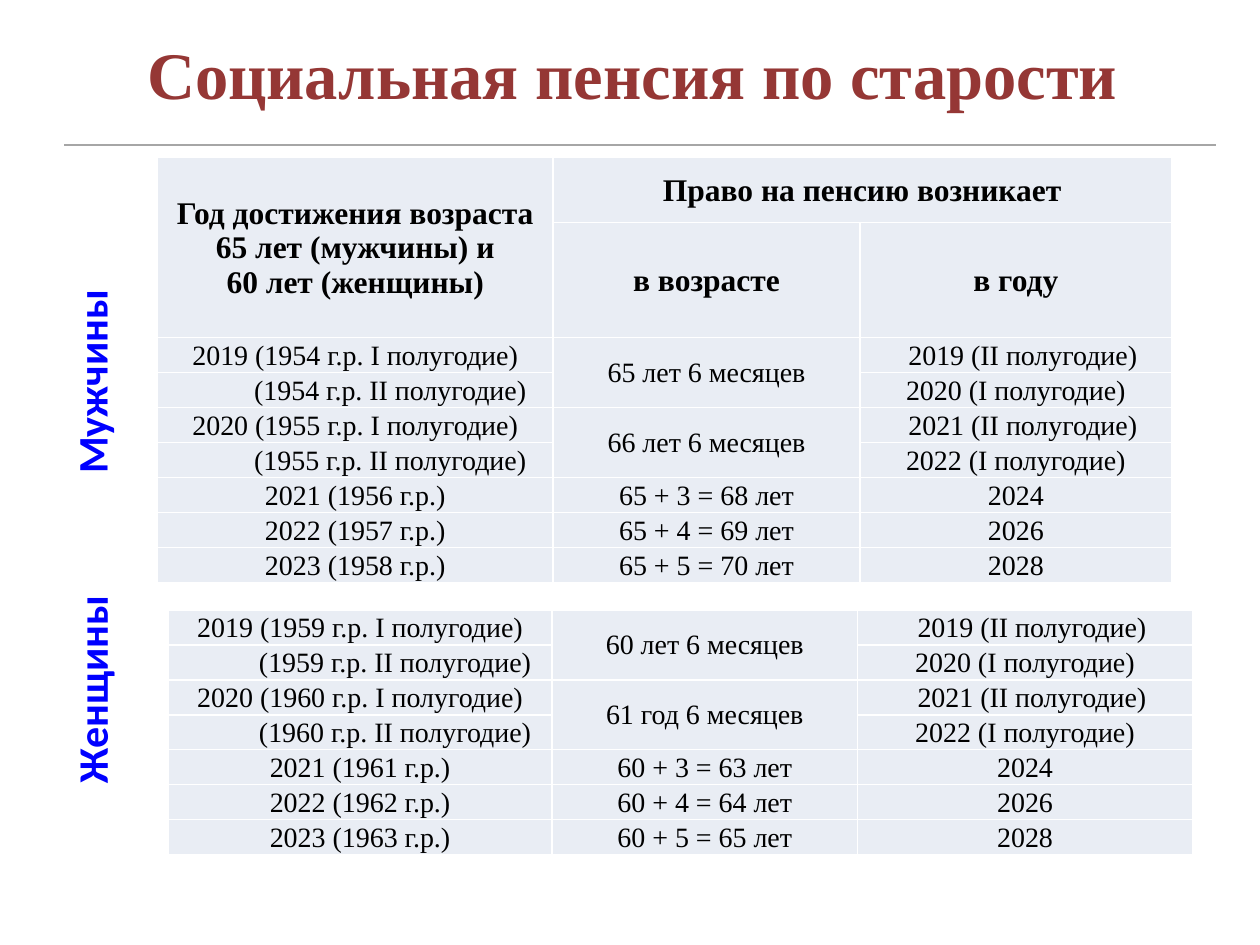
import pptx
import pptx.dml.color
import pptx.enum.shapes
import pptx.enum.text
import pptx.oxml.ns
import pptx.util
from lxml import etree

Pt = pptx.util.Pt
SERIF = "Times New Roman"
MIDDLE = pptx.enum.text.MSO_ANCHOR.MIDDLE
CENTER = pptx.enum.text.PP_ALIGN.CENTER


def paint(color, code):
    color.rgb = pptx.dml.color.RGBColor.from_string(code)


def node(parent, tag, **attrs):
    return etree.SubElement(parent, pptx.oxml.ns.qn("a:" + tag), **attrs)


def write(frame, text, size=16, face=SERIF, color="000000", bold=False, align=CENTER, indent=0):
    par = frame.paragraphs[0]
    par.alignment = align
    par.space_before = Pt(0)
    if indent:
        par._p.get_or_add_pPr().set("marL", str(Pt(indent)))
    for i, line in enumerate(text.split("\n")):
        if i:
            par.add_line_break()
        run = par.add_run()
        run.text = line
        run.font.size = Pt(size)
        run.font.name = face
        run.font.bold = bold
        paint(run.font.color, color)
    node(par._p, "endParaRPr", sz=str(size * 100))


def add_title(slide, text):
    title = slide.shapes.title
    title.left, title.top, title.width, title.height = Pt(1.5), Pt(15), Pt(720), Pt(53.5)
    title.text_frame.vertical_anchor = MIDDLE
    write(title.text_frame, text, size=38, color="953735", bold=True)


def add_rule(slide):
    kind = pptx.enum.shapes.MSO_CONNECTOR.STRAIGHT
    rule = slide.shapes.add_connector(kind, Pt(36.7), Pt(82.8), Pt(694.8), Pt(82.8))
    rule.line.width = Pt(1.5)
    paint(rule.line.color, "A6A6A6")
    node(rule._element.spPr, "effectLst")


def add_label(slide, text, left, top, width):
    box = slide.shapes.add_textbox(Pt(left), Pt(top), Pt(width), Pt(36))
    box.rotation = 270
    box.text_frame.word_wrap = False
    box.text_frame.auto_size = pptx.enum.text.MSO_AUTO_SIZE.SHAPE_TO_FIT_TEXT
    write(box.text_frame, text, size=24, face="Calibri", color="0000FF", bold=True,
          align=pptx.enum.text.PP_ALIGN.LEFT)


def add_edges(cell):
    props = cell._tc.get_or_add_tcPr()
    for side in ("lnL", "lnR", "lnT", "lnB"):
        edge = node(props, side, w=str(Pt(1)))
        node(node(edge, "solidFill"), "srgbClr", val="FFFFFF")


def fill_cell(cell, text, **style):
    add_edges(cell)
    cell.margin_left = cell.margin_right = cell.margin_top = Pt(0.72)
    cell.margin_bottom = Pt(0)
    cell.vertical_anchor = MIDDLE
    cell.fill.solid()
    paint(cell.fill.fore_color, "E9EDF4")
    write(cell.text_frame, text, **style)


def add_grid(slide, left, top, widths, heights, rows, spans):
    frame = slide.shapes.add_table(len(heights), len(widths), Pt(left), Pt(top),
                                   Pt(sum(widths)), Pt(sum(heights)))
    grid = frame.table
    grid.first_row = grid.horz_banding = False
    for col, width in zip(grid.columns, widths):
        col.width = Pt(width)
    for row, height in zip(grid.rows, heights):
        row.height = Pt(height)
    for r, row in enumerate(rows):
        for c, (text, style) in enumerate(row):
            fill_cell(grid.cell(r, c), text, **style)
    for first, last in spans:
        grid.cell(*first).merge(grid.cell(*last))


def list_rows(base, born, ages):
    rows = []
    for i, age in enumerate(ages):
        rows += [
            [(f"{2019 + i} ({born + i} г.р. I полугодие)", {}),
             (f"{age} 6 месяцев", {}),
             (f"{2019 + 2 * i} (II полугодие)", {"indent": 8})],
            [(f"({born + i} г.р. II полугодие)", {"indent": 40}),
             ("", {}),
             (f"{2020 + 2 * i} (I полугодие)", {})],
        ]
    for i in range(2, 5):
        rows.append([(f"{2019 + i} ({born + i} г.р.)", {}),
                     (f"{base} + {i + 1} = {base + i + 1} лет", {}),
                     (str(2020 + 2 * i), {})])
    return rows


def list_spans(start):
    return [((r, 1), (r + 1, 1)) for r in (start, start + 2)]


def main():
    deck = pptx.Presentation()
    deck.slide_width, deck.slide_height = Pt(720), Pt(540)
    slide = deck.slides.add_slide(deck.slide_layouts[5])
    add_rule(slide)
    add_title(slide, "Социальная пенсия по старости")
    add_label(slide, "Мужчины", -8.6, 199.4, 121)
    add_label(slide, "Женщины", -9.4, 375.1, 123)

    head = {"size": 18, "bold": True}
    heads = [
        ["Год достижения возраста\n65 лет (мужчины) и\n60 лет (женщины)",
         "Право на пенсию возникает", ""],
        ["", "в возрасте", "в году"],
    ]
    top = [[(text, head) for text in row] for row in heads]
    men = list_rows(65, 1954, ["65 лет", "66 лет"])
    women = list_rows(60, 1959, ["60 лет", "61 год"])
    lines = [20] * len(men)
    add_grid(slide, 90, 90, [226, 175.5, 178], [37.2, 65.8] + lines, top + men,
             [((0, 0), (1, 0)), ((0, 1), (0, 2))] + list_spans(2))
    add_grid(slide, 96, 348.5, [219.5, 174.5, 191.5], lines, women, list_spans(0))
    deck.save("out.pptx")


if __name__ == "__main__":
    main()
